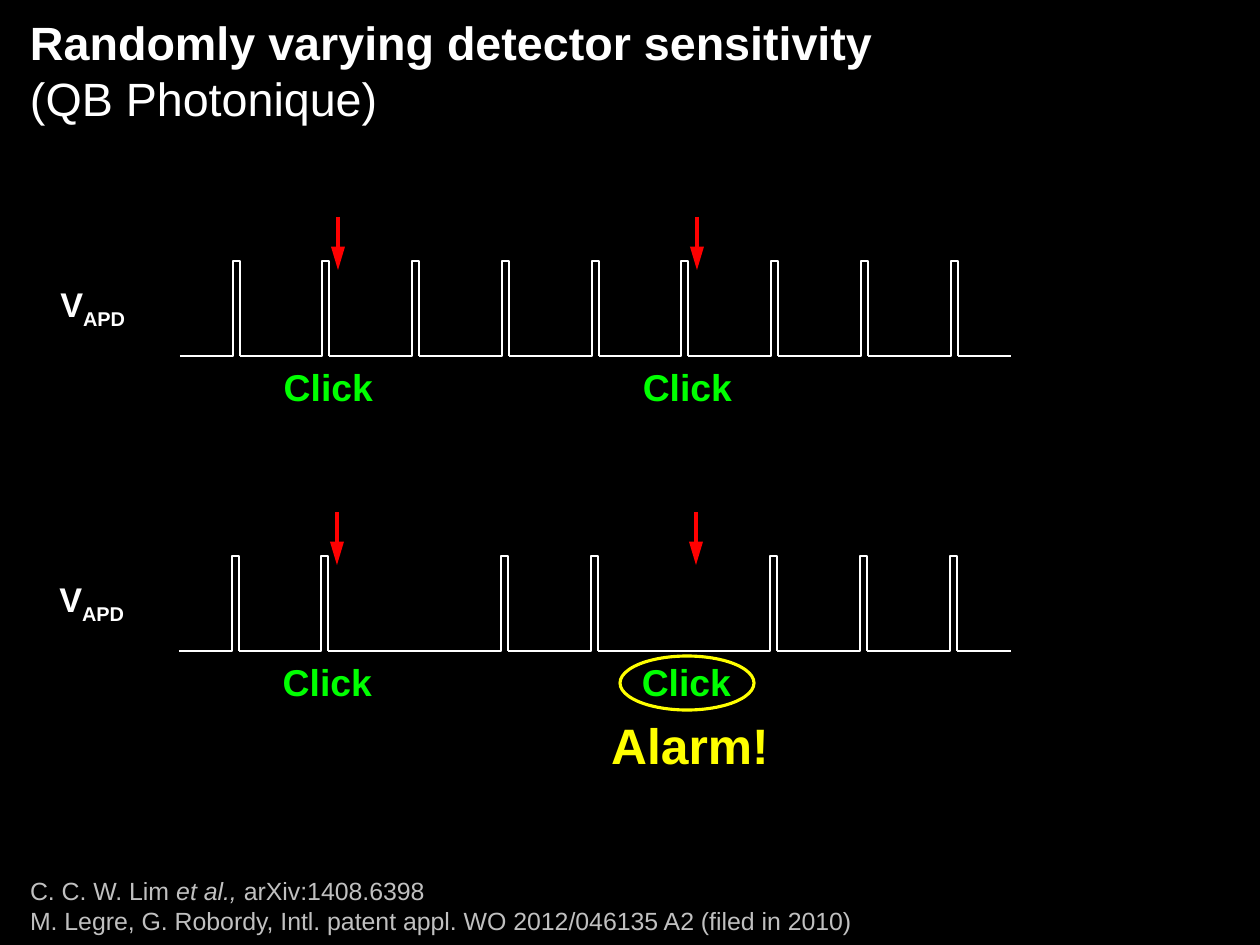
import pptx
import pptx.util
import pptx.dml.color
import pptx.enum.shapes
import pptx.enum.text
import pptx.oxml
import pptx.oxml.ns

RGBColor = pptx.dml.color.RGBColor
BLACK = RGBColor(0x00, 0x00, 0x00)
WHITE = RGBColor(0xFF, 0xFF, 0xFF)
GREY = RGBColor(0xC0, 0xC0, 0xC0)
RED = RGBColor(0xFF, 0x00, 0x00)
GREEN = RGBColor(0x00, 0xFF, 0x00)
YELLOW = RGBColor(0xFF, 0xFF, 0x00)
FONT = "Arial"
ALIGN = pptx.enum.text.PP_ALIGN
ANCHOR = pptx.enum.text.MSO_ANCHOR
FIT = pptx.enum.text.MSO_AUTO_SIZE
SHAPE = pptx.enum.shapes.MSO_SHAPE

TITLE = ["Randomly varying detector sensitivity", "(QB Photonique)"]
REFERENCES = [
    [("C. C. W. Lim ", False), ("et al., ", True), ("arXiv:1408.6398", False)],
    [("M. Legre, G. Robordy, Intl. patent appl. WO 2012/046135 A2 (filed in 2010)", False)],
]
VOLTAGE = ("V", "APD")
CLICK = "Click"
ALARM = "Alarm!"
TRACES = [
    {"shift": (0, 0), "missing": []},
    {"shift": (-1, 295), "missing": [2, 5]},
]

PX = 914400 / 112
SLIDE_WIDTH, SLIDE_HEIGHT = 1260, 945
TRACE_LEFT, TRACE_RIGHT = 180, 1011
FIRST_PULSE, LAST_PULSE, PULSE_COUNT = 233, 951, 9
PULSE_WIDTH, PULSE_TOP, BASELINE = 7, 261, 356
TICK_HEIGHT, TICK_GAP = 7, 2
CLICK_PULSES = [1, 5]


def px(*lengths):
    return [pptx.util.Emu(round(length * PX)) for length in lengths]


def pulse_left(index):
    return FIRST_PULSE + index * (LAST_PULSE - FIRST_PULSE) // (PULSE_COUNT - 1)


def set_font(para, size, color, bold=False):
    para.font.name = FONT
    para.font.size = pptx.util.Pt(size)
    para.font.color.rgb = color
    para.font.bold = bold


def set_line(shape, color, width):
    shape.line.color.rgb = color
    shape.line.width = pptx.util.Pt(width)


def add_shape(page, kind, area):
    shape = page.shapes.add_shape(kind, *px(*area))
    shape.shadow.inherit = False
    return shape


def add_label(page, area, texts, size, color):
    frame = page.shapes.add_textbox(*px(*area)).text_frame
    frame.word_wrap = False
    frame.auto_size = FIT.SHAPE_TO_FIT_TEXT
    para = frame.paragraphs[0]
    para.alignment = ALIGN.RIGHT
    set_font(para, size, color, True)
    for text in texts:
        span = para.add_run()
        span.text = text
    return para


def add_line(page, ends, color, width):
    straight = pptx.enum.shapes.MSO_CONNECTOR.STRAIGHT
    line = page.shapes.add_connector(straight, *px(*ends))
    set_line(line, color, width)
    effects = pptx.oxml.parse_xml("<a:effectLst %s/>" % pptx.oxml.ns.nsdecls("a"))
    line._element.spPr.append(effects)
    return line


def add_arrow(page, x, top, bottom):
    arrow = add_line(page, (x, top, x, bottom), RED, 3)
    head = pptx.oxml.parse_xml(
        '<a:tailEnd %s type="triangle" len="lg"/>' % pptx.oxml.ns.nsdecls("a"))
    arrow.line._get_or_add_ln().append(head)


def add_pulse(page, start, left, top, base, end):
    right = left + PULSE_WIDTH
    builder = page.shapes.build_freeform(start, base, scale=PX)
    builder.add_line_segments(
        [(left, base), (left, top), (right, top), (right, end)], close=False)
    pulse = builder.convert_to_shape()
    pulse.shadow.inherit = False
    pulse.fill.background()
    set_line(pulse, WHITE, 1.5)


def add_trace(page, missing, dx, dy):
    base, top = BASELINE + dy, PULSE_TOP + dy
    start = TRACE_LEFT + dx
    for index in range(PULSE_COUNT):
        left = pulse_left(index) + dx
        right = left + PULSE_WIDTH
        if index in missing:
            add_line(page, (start, base, right, base), WHITE, 1.5)
        elif index == 0:
            add_pulse(page, start, left, top, base, base)
        else:
            add_pulse(page, start, left, top, base, base - TICK_GAP)
            add_line(page, (right, base - TICK_HEIGHT, right, base), WHITE, 1.5)
        start = right
    add_line(page, (start, base, TRACE_RIGHT, base), WHITE, 1.5)


def add_title(page):
    title = page.shapes.title
    title.left, title.top, title.width, title.height = px(30, 8, 1230, 114)
    frame = title.text_frame
    frame.auto_size = FIT.NONE
    frame.vertical_anchor = ANCHOR.TOP
    frame.margin_left = frame.margin_right = 0
    frame.margin_top, frame.margin_bottom = px(6, 6)
    para = frame.paragraphs[0]
    para.alignment = ALIGN.LEFT
    para.line_spacing = 1.0
    set_font(para, 30, WHITE)
    heading = para.add_run()
    heading.text = TITLE[0]
    heading.font.bold = True
    para.add_line_break()
    maker = para.add_run()
    maker.text = TITLE[1]


def add_references(page):
    frame = page.shapes.add_textbox(*px(19, 894, 1224, 47)).text_frame
    frame.word_wrap = True
    frame.vertical_anchor = ANCHOR.BOTTOM
    for number, reference in enumerate(REFERENCES):
        para = frame.add_paragraph() if number else frame.paragraphs[0]
        set_font(para, 16, GREY)
        for text, italic in reference:
            span = para.add_run()
            span.text = text
            span.font.italic = italic


def main():
    deck = pptx.Presentation()
    deck.slide_width, deck.slide_height = px(SLIDE_WIDTH, SLIDE_HEIGHT)
    page = deck.slides.add_slide(deck.slide_layouts[5])
    backdrop = add_shape(page, SHAPE.RECTANGLE, (0, 0, SLIDE_WIDTH, SLIDE_HEIGHT))
    backdrop.fill.solid()
    backdrop.fill.fore_color.rgb = BLACK
    backdrop.line.fill.background()
    page.shapes.title._element.addprevious(backdrop._element)
    add_title(page)
    add_references(page)

    for trace in TRACES:
        dx, dy = trace["shift"]
        add_trace(page, trace["missing"], dx, dy)
        label = add_label(page, (44 + dx, 278 + dy, 92, 53), VOLTAGE, 22, WHITE)
        label.runs[1]._r.get_or_add_rPr().set("baseline", "-25000")
        for index in CLICK_PULSES:
            left = pulse_left(index) + dx
            add_arrow(page, left + 16, 217 + dy, 270 + dy)
            add_label(page, (left - 51, 359 + dy, 113, 56), [CLICK], 24, GREEN)

    ring = add_shape(page, SHAPE.OVAL, (620, 656, 134, 54))
    ring.fill.background()
    set_line(ring, YELLOW, 2)
    add_label(page, (599, 709, 181, 72), [ALARM], 32, YELLOW)
    deck.save("out.pptx")


if __name__ == "__main__":
    main()
